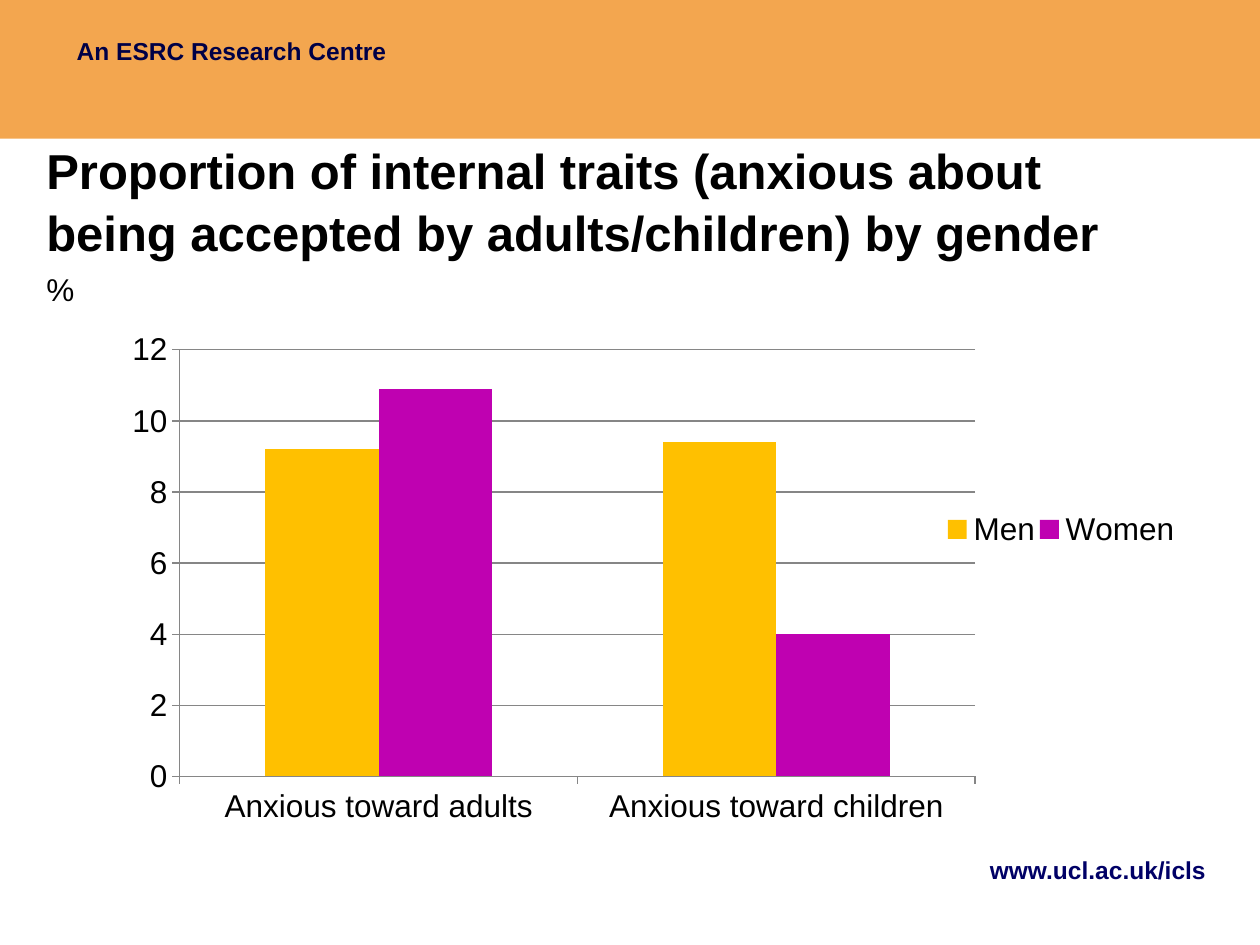
from lxml import etree
from pptx import Presentation
from pptx.chart.data import CategoryChartData
from pptx.dml.color import RGBColor
from pptx.enum.chart import XL_CHART_TYPE, XL_LEGEND_POSITION, XL_TICK_MARK
from pptx.enum.shapes import MSO_SHAPE
from pptx.enum.text import MSO_ANCHOR, PP_ALIGN
from pptx.oxml.ns import qn
from pptx.util import Inches, Pt

CLUSTERED = XL_CHART_TYPE.COLUMN_CLUSTERED
LEGEND_RIGHT = XL_LEGEND_POSITION.RIGHT
TICK_OUT, TICK_NONE = XL_TICK_MARK.OUTSIDE, XL_TICK_MARK.NONE
RECT = MSO_SHAPE.RECTANGLE
TOP, MIDDLE = MSO_ANCHOR.TOP, MSO_ANCHOR.MIDDLE
LEFT, RIGHT = PP_ALIGN.LEFT, PP_ALIGN.RIGHT

FONT = "Arial"
COLORS = {
    "band": "F3A64F",
    "header": "000046",
    "link": "000066",
    "text": "000000",
    "axis": "868686",
    "Men": "FFC000",
    "Women": "BF01B1",
}
CATEGORIES = ["Anxious toward adults", "Anxious toward children"]
SERIES = {"Men": (9.2, 9.4), "Women": (10.9, 4)}


def rgb(name):
    return RGBColor.from_string(COLORS[name])


def set_font(font, color, **formats):
    for name, value in {"name": FONT, **formats}.items():
        setattr(font, name, value)
    font.color.rgb = rgb(color)


def add_text(s, box, text, size, color="text", bold=False, align=LEFT,
             anchor=TOP, spacing=1.0):
    tf = s.shapes.add_textbox(*map(Inches, box)).text_frame
    tf.word_wrap = True
    tf.vertical_anchor = anchor
    p = tf.paragraphs[0]
    p.alignment = align
    p.line_spacing = spacing
    r = p.add_run()
    r.text = text
    set_font(r.font, color, size=Pt(size), bold=bold)


def add_header(s, box):
    left, top, width, height = box
    band = s.shapes.add_shape(RECT, *map(Inches, box))
    band.shadow.inherit = False
    band.fill.solid()
    band.fill.fore_color.rgb = rgb("band")
    band.line.fill.background()
    add_text(s, (left + 0.51, top + 0.24, 3.62, 0.33),
             "An ESRC Research Centre", 14, "header", bold=True)


def set_layout(parent, before, x, y, w, h, inner=False):
    """Fix the place of a chart part, as fractions of the chart."""
    for old in parent.findall(qn("c:layout")):
        parent.remove(old)
    layout = etree.Element(qn("c:layout"))
    manual = etree.SubElement(layout, qn("c:manualLayout"))
    values = {"layoutTarget": "inner"} if inner else {}
    values.update(xMode="edge", yMode="edge", x=x, y=y, w=w, h=h)
    for tag, value in values.items():
        etree.SubElement(manual, qn(f"c:{tag}")).set("val", str(value))
    parent.find(qn(before)).addprevious(layout)


def add_traits_chart(s, box):
    data = CategoryChartData()
    data.categories = CATEGORIES
    for name, values in SERIES.items():
        data.add_series(name, values)
    chart = s.shapes.add_chart(CLUSTERED, *map(Inches, box), data).chart
    chart.has_title = False
    set_font(chart.font, "text", size=Pt(18))

    # Columns
    plot = chart.plots[0]
    plot.gap_width, plot.overlap, plot.vary_by_categories = 150, 0, False
    for series in plot.series:
        series.format.fill.solid()
        series.format.fill.fore_color.rgb = rgb(series.name)

    # Axes and gridlines
    value_axis = chart.value_axis
    value_axis.minimum_scale, value_axis.maximum_scale = 0, 12
    value_axis.major_unit = 2
    value_axis.has_major_gridlines = True
    for axis in (chart.category_axis, value_axis):
        axis.major_tick_mark, axis.minor_tick_mark = TICK_OUT, TICK_NONE
    for part in (chart.category_axis, value_axis, value_axis.major_gridlines):
        part.format.line.color.rgb = rgb("axis")
        part.format.line.width = Pt(0.75)

    # Legend in one row, beside the plot
    chart.has_legend = True
    legend = chart.legend
    legend.position = LEGEND_RIGHT
    legend.include_in_layout = False
    set_font(legend.font, "text", size=Pt(18))
    plot_area = chart.element.find(".//" + qn("c:plotArea"))
    set_layout(plot_area, "c:barChart", 0.07, 0.05, 0.74, 0.82, inner=True)
    legend_xml = chart.element.find(".//" + qn("c:legend"))
    set_layout(legend_xml, "c:overlay", 0.78, 0.35, 0.22, 0.09)


def build_slide(prs):
    s = prs.slides.add_slide(prs.slide_layouts[6])
    add_header(s, (0, 0, 10, 1.1))
    add_text(s, (0.27, 1.07, 9.06, 1.02),
             "Proportion of internal traits (anxious about being accepted "
             "by adults/children) by gender",
             28, bold=True, anchor=MIDDLE, spacing=1.05)
    add_traits_chart(s, (0.83, 2.57, 8.53, 4.13))
    add_text(s, (6.5, 6.74, 3.17, 0.52), "www.ucl.ac.uk/icls", 14, "link",
             bold=True, align=RIGHT)
    add_text(s, (0.27, 2.09, 0.5, 0.4), "%", 18)


def main():
    prs = Presentation()
    prs.slide_width, prs.slide_height = Inches(10), Inches(7.5)
    build_slide(prs)
    prs.save("out.pptx")


if __name__ == "__main__":
    main()
